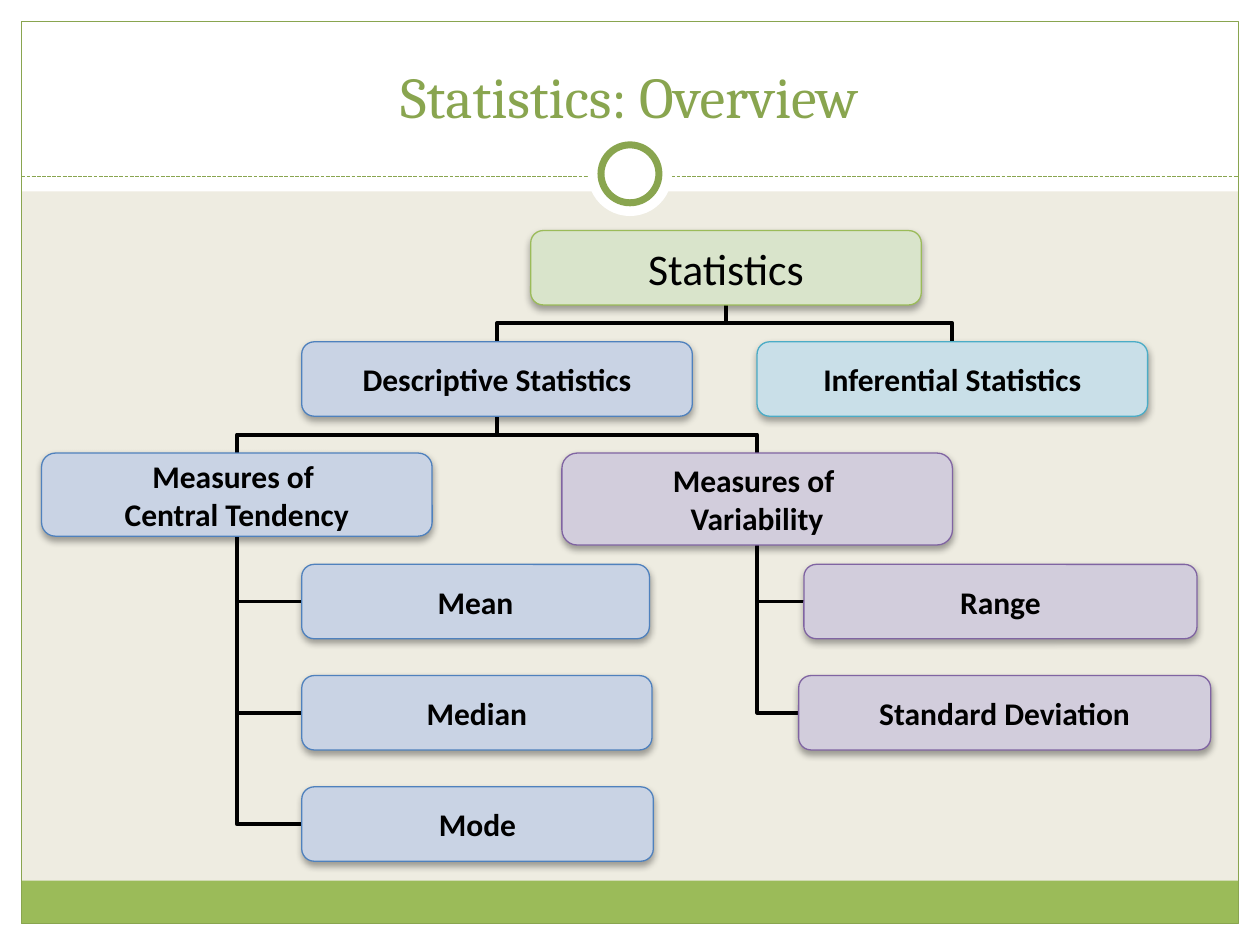
from dataclasses import dataclass

from lxml.etree import SubElement
from pptx import Presentation
from pptx.dml.color import RGBColor
from pptx.enum.dml import MSO_LINE
from pptx.enum.shapes import MSO_CONNECTOR as Connector, MSO_SHAPE as Shape
from pptx.enum.text import MSO_ANCHOR as Anchor, PP_ALIGN as Align
from pptx.oxml.ns import qn
from pptx.util import Inches, Pt


@dataclass(frozen=True)
class Theme:
    background: str = "EEECE1"
    white: str = "FFFFFF"
    black: str = "000000"
    accent: str = "89A54F"
    footer: str = "9BBB59"
    heading_font: str = "Cambria"
    body_font: str = "Calibri"
    title_size: float = 33
    root_size: float = 25
    node_size: float = 18
    thin: float = 0.75
    branch: float = 2.25
    ring: float = 4


THEME = Theme()
PALETTE = {
    "green": ("D9E4CB", "9BBB59"),
    "blue": ("C9D3E4", "4F81BD"),
    "teal": ("C9DFE8", "4BACC6"),
    "purple": ("D2CDDC", "8064A2"),
}
WIDTH, HEIGHT, MARGIN = 10, 7.5, 0.17
HEADER_HEIGHT, RULE_Y, FOOTER_HEIGHT = 1.52, 1.4, 0.34
RING_Y = 1.38
GRID_LEFT, GRID_TOP, COLUMN, ROW = 0.33, 1.83, 2.065, 0.883
NODE_WIDTH, NODE_HEIGHT = 3.1, 0.59

TITLE = "Statistics: Overview"
NODES = {
    "root": ("Statistics", "green", 1.88, 0, NODE_WIDTH, NODE_HEIGHT),
    "descriptive": ("Descriptive Statistics", "blue", 1, 1, NODE_WIDTH, NODE_HEIGHT),
    "inferential": ("Inferential Statistics", "teal", 2.75, 1, NODE_WIDTH, NODE_HEIGHT),
    "tendency": ("Measures of \nCentral Tendency", "blue", 0, 2, NODE_WIDTH, 0.66),
    "variability": ("Measures of \nVariability", "purple", 2, 2, NODE_WIDTH, 0.73),
    "mean": ("Mean", "blue", 1, 3, 2.76, NODE_HEIGHT),
    "median": ("Median", "blue", 1, 4, 2.78, NODE_HEIGHT),
    "mode": ("Mode", "blue", 1, 5, 2.79, NODE_HEIGHT),
    "range": ("Range", "purple", 2.93, 3, 3.12, NODE_HEIGHT),
    "deviation": ("Standard Deviation", "purple", 2.91, 4, 3.27, NODE_HEIGHT),
}
SPLITS = {
    "root": ("descriptive", "inferential"),
    "descriptive": ("tendency", "variability"),
}
LISTS = {
    "tendency": ("mean", "median", "mode"),
    "variability": ("range", "deviation"),
}


def color(value):
    return RGBColor.from_string(value)


def add_block(slide, kind, box, fill=None, line=None, weight=THEME.thin):
    shape = slide.shapes.add_shape(kind, *map(Inches, box))
    shape.shadow.inherit = False
    if fill:
        shape.fill.solid()
        shape.fill.fore_color.rgb = color(fill)
    else:
        shape.fill.background()
    if line:
        shape.line.color.rgb = color(line)
        shape.line.width = Pt(weight)
    else:
        shape.line.fill.background()
    return shape


def write(shape, text, font, size, ink, anchor, bold=False):
    frame = shape.text_frame
    frame.text = text
    frame.vertical_anchor = anchor
    for paragraph in frame.paragraphs:
        paragraph.alignment = Align.CENTER
        for run in paragraph.runs:
            run.font.name = font
            run.font.size = Pt(size)
            run.font.bold = bold
            run.font.color.rgb = color(ink)


def style_line(connector, ink, weight):
    connector.line.color.rgb = color(ink)
    connector.line.width = Pt(weight)
    SubElement(connector.element.spPr, qn("a:effectLst"))


def add_circle(slide, diameter, line=None):
    box = (WIDTH / 2 - diameter / 2, RING_Y - diameter / 2, diameter, diameter)
    add_block(slide, Shape.OVAL, box, THEME.white, line, THEME.ring)


def add_frame(slide):
    right, bottom = WIDTH - MARGIN, HEIGHT - MARGIN
    inner = WIDTH - 2 * MARGIN
    for box in (
        (0, bottom, WIDTH, MARGIN),
        (0, 0, WIDTH, HEADER_HEIGHT),
        (0, 0, MARGIN, HEIGHT),
        (right, 0, MARGIN, HEIGHT),
    ):
        add_block(slide, Shape.RECTANGLE, box, THEME.white)
    footer = (MARGIN, bottom - FOOTER_HEIGHT, inner, FOOTER_HEIGHT)
    add_block(slide, Shape.RECTANGLE, footer, THEME.footer)
    border = (MARGIN, MARGIN, inner, HEIGHT - 2 * MARGIN)
    add_block(slide, Shape.RECTANGLE, border, line=THEME.accent)
    ends = map(Inches, (MARGIN, RULE_Y, right, RULE_Y))
    rule = slide.shapes.add_connector(Connector.STRAIGHT, *ends)
    style_line(rule, THEME.accent, THEME.thin)
    rule.line.dash_style = MSO_LINE.SQUARE_DOT
    add_circle(slide, 0.67)
    add_circle(slide, 0.46, THEME.accent)


def add_title(slide):
    title = slide.shapes.add_textbox(*map(Inches, (0.33, 0.25, 9.33, 0.83)))
    title.text_frame.word_wrap = True
    write(title, TITLE, THEME.heading_font, THEME.title_size, THEME.accent, Anchor.BOTTOM)


def add_shadow(shape):
    effects = shape.element.spPr.find(qn("a:effectLst"))
    shadow = SubElement(effects, qn("a:outerShdw"), blurRad=str(Pt(4)), dist=str(Pt(2)),
                        dir="5400000", rotWithShape="0")
    ink = SubElement(shadow, qn("a:srgbClr"), val=THEME.black)
    SubElement(ink, qn("a:alpha"), val="35000")


def add_node(slide, text, palette, column, row, width, height):
    box = (GRID_LEFT + column * COLUMN, GRID_TOP + row * ROW, width, height)
    node = add_block(slide, Shape.ROUNDED_RECTANGLE, box, *PALETTE[palette])
    add_shadow(node)
    frame = node.text_frame
    frame.margin_left = frame.margin_right = frame.margin_top = frame.margin_bottom = 0
    frame.word_wrap = False
    is_root = row == 0
    size = THEME.root_size if is_root else THEME.node_size
    write(node, text, THEME.body_font, size, THEME.black, Anchor.MIDDLE, not is_root)
    return node


def add_branch(slide, root, parent, child, split):
    connector = slide.shapes.add_connector(Connector.ELBOW, 0, 0, 0, 0)
    connector.begin_connect(child, 0 if split else 1)
    connector.end_connect(parent, 2)
    end_x, end_y = parent.left + parent.width // 2, parent.top + parent.height
    start_x = child.left + (child.width // 2 if split else 0)
    start_y = child.top + (0 if split else child.height // 2)
    across, down = abs(start_x - end_x), abs(start_y - end_y)
    width, height = (down, across) if split else (across, down)
    connector.left = (start_x + end_x - width) // 2
    connector.top = (start_y + end_y - height) // 2
    connector.width, connector.height = width, height
    transform = connector.element.spPr.find(qn("a:xfrm"))
    transform.set("rot", "5400000" if split else "10800000")
    transform.set("flipH", "1" if split else "0")
    transform.set("flipV", "1" if split and start_x < end_x else "0")
    if not split:
        connector.element.spPr.find(qn("a:prstGeom")).set("prst", "bentConnector2")
    style_line(connector, THEME.black, THEME.branch)
    root.element.addprevious(connector.element)


def main():
    presentation = Presentation()
    presentation.slide_width, presentation.slide_height = Inches(WIDTH), Inches(HEIGHT)
    slide = presentation.slides.add_slide(presentation.slide_layouts[6])
    slide.background.fill.solid()
    slide.background.fill.fore_color.rgb = color(THEME.background)
    add_frame(slide)
    add_title(slide)
    nodes = {name: add_node(slide, *details) for name, details in NODES.items()}
    for families, split in ((LISTS, False), (SPLITS, True)):
        for parent, children in families.items():
            for child in children:
                add_branch(slide, nodes["root"], nodes[parent], nodes[child], split)
    presentation.save("out.pptx")


if __name__ == "__main__":
    main()
